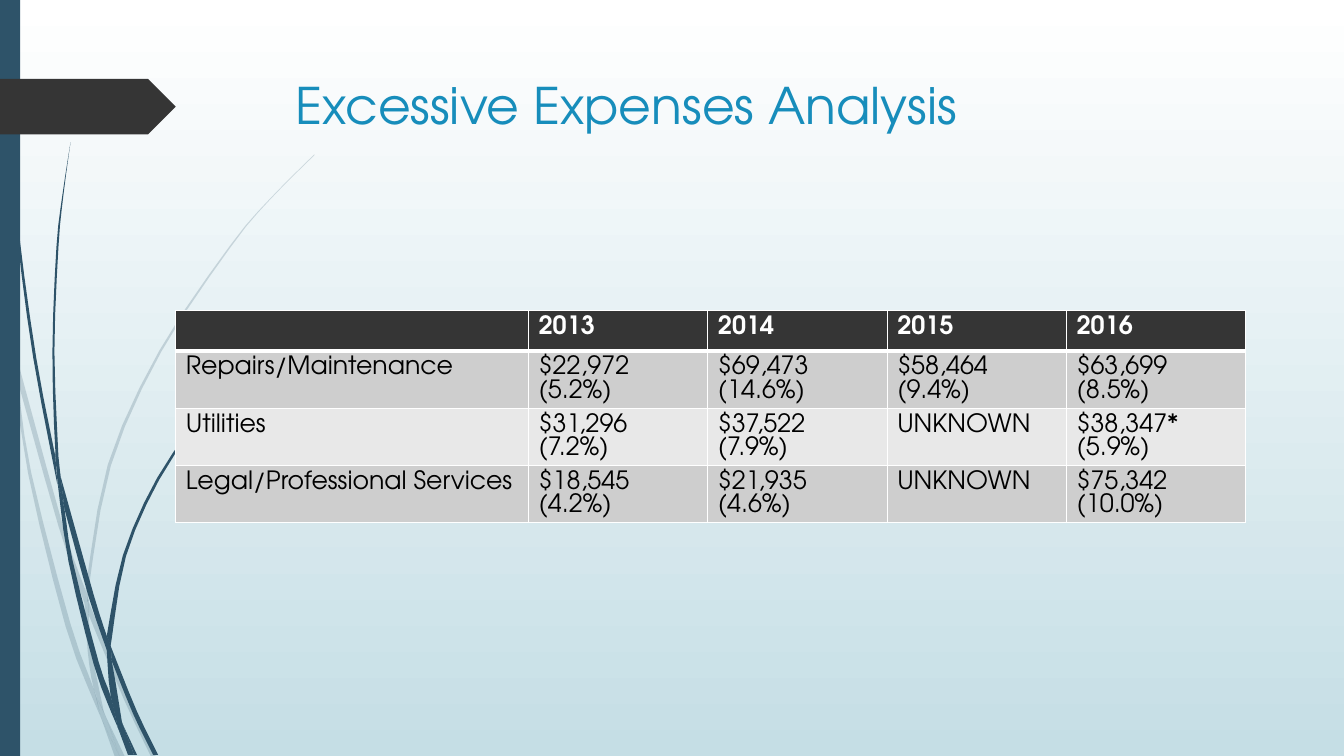
from dataclasses import dataclass

from lxml import etree
from pptx import Presentation
from pptx.dml.color import RGBColor
from pptx.enum.shapes import MSO_SHAPE
from pptx.enum.text import MSO_ANCHOR, PP_ALIGN
from pptx.oxml.ns import qn
from pptx.util import Cm, Pt

RECT, TAG = MSO_SHAPE.RECTANGLE, MSO_SHAPE.PENTAGON
TOP, LEFT = MSO_ANCHOR.TOP, PP_ALIGN.LEFT


@dataclass(frozen=True)
class Theme:
    font: str = "TeX Gyre Adventor"
    title_size: int = 36
    cell_size: int = 18
    cell_pitch: float = 16.8
    title: str = "178DBB"
    accent: str = "2E5369"
    dark: str = "353535"
    white: str = "FFFFFF"
    black: str = "000000"
    sky: str = "C5DEE5"
    bands: tuple = ("CECECE", "E8E8E8")
    faint: int = 20


THEME = Theme()

HEADER = ["", "2013", "2014", "2015", "2016"]
EXPENSES = [
    ["Repairs/Maintenance", "$22,972\n(5.2%)", "$69,473\n(14.6%)", "$58,464\n(9.4%)", "$63,699\n(8.5%)"],
    ["Utilities", "$31,296\n(7.2%)", "$37,522\n(7.9%)", "UNKNOWN", "$38,347*\n(5.9%)"],
    ["Legal/Professional Services", "$18,545\n(4.2%)", "$21,935\n(4.6%)", "UNKNOWN", "$75,342\n(10.0%)"],
]

# Each piece of grass: the edge running down, then the edge running up, in inches.
FAINT_GRASS = [
    ([(0, 2.82), (.09, 3.22), (.11, 3.5)], [(.1, 3.44), (0, 2.99)]),
    ([(.14, 3.45), (.62, 5.2), (.85, 5.86)], [(.84, 5.99), (.58, 5.22), (.17, 3.76)]),
    ([(.88, 5.96), (.92, 6.07), (1.27, 6.92), (1.55, 7.51)], [(1.5, 7.51), (1.23, 6.94), (.88, 6.1)]),
    ([(1.05, 7.11), (1.24, 7.51)], [(1.19, 7.51)]),
    ([(.11, 3.5), (.17, 3.76), (.31, 4.69), (.7, 6.19), (.93, 6.83), (.99, 7.07), (1.01, 7.14)],
     [(.92, 6.93), (.65, 6.21), (.28, 4.7), (.11, 3.5)]),
    ([(.84, 5.99), (.87, 6.46), (.93, 6.83), (1.05, 7.11)], [(1.03, 7.06), (.91, 6.46), (.88, 6.08)]),
    ([(3.12, 1.53), (2.68, 1.97), (2.28, 2.44), (1.58, 3.48), (1.07, 4.61), (.85, 5.84)],
     [(.88, 5.96), (.88, 5.84), (1.1, 4.62), (1.6, 3.49), (2.29, 2.45), (2.68, 1.98), (3.12, 1.54)]),
    ([(1.01, 7.14), (1.14, 7.51)], [(1.19, 7.51)]),
    ([(.85, 5.86), (.88, 5.96), (.88, 6.1)], [(.88, 6.08), (.84, 5.99)]),
    ([(.93, 6.83), (.96, 6.92), (1.05, 7.11), (1.19, 7.51)], [(1.01, 7.14), (.99, 7.07)]),
]
SOLID_GRASS = [
    ([(.03, 0), (.07, 1.1), (.17, 2.33), (.33, 3.55), (.57, 4.81)],
     [(.55, 4.53), (.36, 3.55), (.19, 2.32), (.08, 1.09), (.04, 0)]),
    ([(.6, 4.72), (.93, 5.9), (1.06, 6.31)], [(1.06, 6.45), (.88, 5.92), (.64, 5.05)]),
    ([(1.1, 6.41), (1.13, 6.49), (1.36, 7.06), (1.57, 7.49)], [(1.52, 7.49), (1.32, 7.08), (1.11, 6.56)]),
    ([(.57, 4.77), (.64, 5.05), (.72, 5.56), (.98, 6.57), (1.1, 6.91), (1.17, 7.22)],
     [(1.11, 7.08), (.93, 6.59), (.68, 5.57), (.57, 4.77)]),
    ([(.7, 1.41), (.62, 1.93), (.56, 2.45), (.52, 3.49), (.55, 4.49), (.6, 4.72)],
     [(.58, 4.53), (.54, 3.49), (.58, 2.45), (.63, 1.93), (.7, 1.41)]),
    ([(1.22, 7.19), (1.36, 7.49)], [(1.33, 7.49)]),
    ([(.55, 4.49), (.6, 4.72), (.64, 5.05)], [(.57, 4.77), (.55, 4.53)]),
    ([(2.6, 3.44), (2.31, 3.73), (2.04, 4.05), (1.56, 4.74), (1.22, 5.51), (1.06, 6.31)],
     [(1.1, 6.41), (1.11, 6.33), (1.25, 5.52), (1.58, 4.76), (2.05, 4.06), (2.31, 3.74), (2.6, 3.44)]),
    ([(1.17, 7.22), (1.31, 7.49)], [(1.27, 7.49)]),
    ([(1.06, 6.45), (1.1, 6.91), (1.22, 7.19)], [(1.21, 7.16), (1.11, 6.56), (1.06, 6.45)]),
    ([(1.06, 6.31), (1.1, 6.41), (1.11, 6.56)], [(1.06, 6.45)]),
    ([(1.1, 6.91), (1.22, 7.19), (1.33, 7.49)], [(1.3, 7.49), (1.17, 7.22)]),
]


def rgb(color):
    return RGBColor.from_string(color)


def set_attrs(obj, values):
    for name, value in values.items():
        setattr(obj, name, value)


def paint(sp, color, alpha=100):
    sp.shadow.inherit = False
    sp.fill.solid()
    sp.fill.fore_color.rgb = rgb(color)
    sp.line.fill.background()
    if alpha < 100:
        clr = sp._element.spPr.find(qn("a:solidFill"))[0]
        etree.SubElement(clr, qn("a:alpha"), val=str(alpha * 1000))


def smooth(points, steps=3):
    """Return points on a Catmull-Rom curve through the given ones."""
    padded = [points[0], *points, points[-1]]
    curve = []
    for knots in zip(padded, padded[1:], padded[2:], padded[3:]):
        for t in (i / steps for i in range(steps)):
            curve.append(tuple(
                (2 * q + (r - p) * t + (2 * p - 5 * q + 4 * r - w) * t**2 + (3 * q - p - 3 * r + w) * t**3) / 2
                for p, q, r, w in zip(*knots)))
    return curve + [points[-1]]


def add_grass(s, pieces, alpha=100):
    for edges in pieces:
        points = [(Cm(x * 2.54), Cm(y * 2.54)) for edge in edges for x, y in smooth(edge)]
        builder = s.shapes.build_freeform(*points[0])
        builder.add_line_segments(points[1:], close=True)
        paint(builder.convert_to_shape(), THEME.accent, alpha)


def add_block(s, kind, box, color):
    sp = s.shapes.add_shape(kind, *map(Cm, box))
    paint(sp, color)
    return sp


def style_run(r, size, color, bold=False):
    set_attrs(r.font, {"name": THEME.font, "size": Pt(size), "bold": bold})
    r.font.color.rgb = rgb(color)


def add_title(s, text):
    sp = s.shapes.title
    set_attrs(sp, dict(zip(("left", "top", "width", "height"), map(Cm, (7.19, 1.73, 24.77, 3.56)))))
    tf = sp.text_frame
    set_attrs(tf, {"vertical_anchor": TOP, "word_wrap": True})
    p = tf.paragraphs[0]
    p.alignment = LEFT
    r = p.add_run()
    r.text = text
    style_run(r, THEME.title_size, THEME.title)


def set_borders(cell, widths):
    """Draw white cell borders; widths are points for left, right, top, bottom."""
    tc_pr = cell._tc.get_or_add_tcPr()
    for i, (side, width) in enumerate(zip("LRTB", widths)):
        ln = etree.Element(qn(f"a:ln{side}"), w=str(Pt(width)))
        fill = etree.SubElement(ln, qn("a:solidFill"))
        etree.SubElement(fill, qn("a:srgbClr"), val=THEME.white)
        tc_pr.insert(i, ln)


def fill_cell(cell, text, fill, color, bold, borders):
    cell.fill.solid()
    cell.fill.fore_color.rgb = rgb(fill)
    set_borders(cell, borders)
    cell.text_frame.text = text
    for p in cell.text_frame.paragraphs:
        p.line_spacing = Pt(THEME.cell_pitch)
        p.font.size = Pt(THEME.cell_size)
        for r in p.runs:
            style_run(r, THEME.cell_size, color, bold)


def add_expense_table(s):
    rows = [HEADER, *EXPENSES]
    widths, heights = [8.89] + [4.52] * 4, [1.02] + [1.44] * 3
    frame = s.shapes.add_table(len(rows), len(HEADER), Cm(4.43), Cm(7.82), Cm(sum(widths)), Cm(sum(heights)))
    table = frame.table
    for column, width in zip(table.columns, widths):
        column.width = Cm(width)
    for i, (row, height) in enumerate(zip(rows, heights)):
        table.rows[i].height = Cm(height)
        head = i == 0
        fill = THEME.dark if head else THEME.bands[(i - 1) % 2]
        color = THEME.white if head else THEME.black
        borders = (1, 1, 3 if i == 1 else 1, 3 if head else 1)
        for j, text in enumerate(row):
            fill_cell(table.cell(i, j), text, fill, color, head, borders)


def set_background(s):
    fill = s.background.fill
    fill.gradient()
    fill.gradient_angle = 270
    for stop, position, color in zip(fill.gradient_stops, (0, 1), (THEME.white, THEME.sky)):
        stop.position = position
        stop.color.rgb = rgb(color)


def main():
    prs = Presentation()
    set_attrs(prs, {"slide_width": Cm(33.87), "slide_height": Cm(19.05)})
    s = prs.slides.add_slide(prs.slide_layouts[5])
    set_background(s)
    add_grass(s, FAINT_GRASS, THEME.faint)
    add_grass(s, SOLID_GRASS)
    add_block(s, RECT, (0, 0, 0.51, 19.05), THEME.accent)
    tag = add_block(s, TAG, (0, 1.99, 4.43, 1.4), THEME.dark)
    tag.adjustments[0] = 0.5
    add_title(s, "Excessive Expenses Analysis")
    add_expense_table(s)
    prs.save("out.pptx")


if __name__ == "__main__":
    main()
